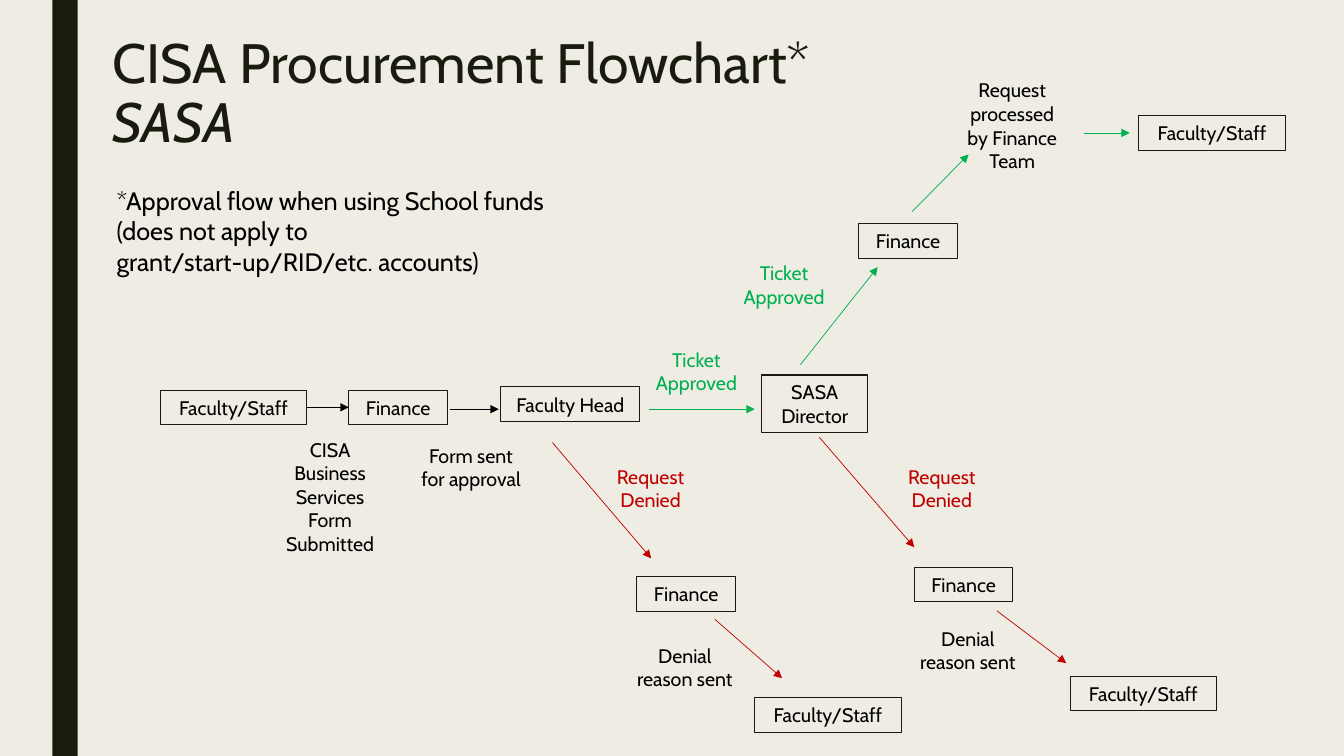
"""Build the procurement flowchart slide."""
from lxml import etree
from pptx import Presentation
from pptx import util as u
from pptx.dml import color
from pptx.enum import shapes, text
from pptx.oxml import ns

FONT = "Cabin"
HUES = {"page": "EFEDE3", "dark": "191B0E", "black": "000000",
        "green": "00B050", "red": "C00000"}
BOXES = [
    ("Faculty/Staff", 4.04, 9.83, 3.69, 0.87),
    ("Finance", 8.79, 9.83, 2.49, 0.87),
    ("Faculty Head", 12.62, 9.75, 3.51, 0.87),
    ("SASA Director", 19.2, 9.45, 2.67, 1.45),
    ("Finance", 21.64, 5.64, 2.49, 0.87),
    ("Faculty/Staff", 28.7, 2.92, 3.69, 0.87),
    ("Finance", 16.05, 14.53, 2.49, 0.87),
    ("Faculty/Staff", 19.02, 17.58, 3.69, 0.87),
    ("Finance", 23.04, 14.3, 2.49, 0.87),
    ("Faculty/Staff", 26.97, 17.04, 3.69, 0.87),
]
LABELS = [
    ("CISA Business Services Form Submitted", 6.76, 10.9, 3.12, 3.25, "black"),
    ("Form sent for approval", 10.31, 11.05, 3.12, 1.45, "black"),
    ("Ticket Approved", 15.85, 8.64, 3.4, 1.45, "green"),
    ("Ticket Approved", 18.06, 6.45, 3.4, 1.45, "green"),
    ("Request processed by Finance Team", 23.95, 1.85, 3.12, 2.64, "black"),
    ("Request Denied", 14.73, 11.58, 3.33, 1.45, "red"),
    ("Request Denied", 22.07, 11.58, 3.33, 1.45, "red"),
    ("Denial reason sent", 15.7, 16.1, 3.12, 1.45, "black"),
    ("Denial reason sent", 22.83, 15.67, 3.12, 1.45, "black"),
]
ARROWS = [
    (11.33, 10.31, 12.57, 10.31, "black"),
    (16.36, 10.31, 19.02, 10.31, "green"),
    (20.17, 9.19, 22.12, 6.73, "green"),
    (22.99, 5.33, 24.41, 3.89, "green"),
    (27.33, 3.35, 28.47, 3.35, "green"),
    (13.92, 11.15, 16.41, 14.07, "red"),
    (20.65, 11.02, 23.04, 13.79, "red"),
    (18.01, 15.6, 19.71, 17.09, "red"),
    (25.12, 15.39, 26.87, 16.71, "red"),
]


def hue(name):
    return color.RGBColor.from_string(HUES[name])


def place(*sizes):
    return [u.Cm(size) for size in sizes]


def write(para, words, size=14, tint="black", align=text.PP_ALIGN.CENTER, slant=False):
    para.alignment = align
    run = para.add_run()
    run.text = words
    run.font.name = FONT
    run.font.size = u.Pt(size)
    run.font.italic = slant
    run.font.color.rgb = hue(tint)


def add_title(slide):
    title = slide.shapes.title
    title.left, title.top, title.width, title.height = place(2.57, 0.79, 19.76, 4.62)
    frame = title.text_frame
    frame.word_wrap = True
    frame.auto_size = text.MSO_AUTO_SIZE.NONE
    frame.vertical_anchor = text.MSO_ANCHOR.TOP
    para = frame.paragraphs[0]
    para.line_spacing = 0.89
    style = {"size": 39.6, "tint": "dark", "align": text.PP_ALIGN.LEFT}
    write(para, "CISA Procurement Flowchart*", **style)
    para.add_line_break()
    write(para, "SASA", slant=True, **style)


def add_bar(slide):
    bar = slide.shapes.add_shape(shapes.MSO_SHAPE.RECTANGLE, *place(1.32, 0, 0.64, 19.05))
    bar.shadow.inherit = False
    bar.fill.solid()
    bar.fill.fore_color.rgb = hue("dark")
    bar.line.fill.background()


def add_box(slide, words, *spot):
    box = slide.shapes.add_shape(shapes.MSO_SHAPE.RECTANGLE, *place(*spot))
    box.shadow.inherit = False
    box.fill.background()
    box.line.color.rgb = hue("dark")
    box.line.width = u.Pt(0.75)
    box.text_frame.word_wrap = True
    write(box.text_frame.paragraphs[0], words)
    return box


def add_label(slide, words, *spot, **style):
    frame = slide.shapes.add_textbox(*place(*spot)).text_frame
    frame.word_wrap = True
    write(frame.paragraphs[0], words, **style)


def add_arrow(slide, *ends, tint="black"):
    arrow = slide.shapes.add_connector(shapes.MSO_CONNECTOR.STRAIGHT, *place(*ends))
    arrow.line.color.rgb = hue(tint)
    arrow.line.width = u.Pt(0.5)
    etree.SubElement(arrow.line._get_or_add_ln(), ns.qn("a:tailEnd"), type="triangle")
    etree.SubElement(arrow._element.spPr, ns.qn("a:effectLst"))
    return arrow


def main():
    deck = Presentation()
    deck.slide_width, deck.slide_height = place(33.87, 19.05)
    slide = deck.slides.add_slide(deck.slide_layouts[5])
    slide.background.fill.solid()
    slide.background.fill.fore_color.rgb = hue("page")
    add_bar(slide)
    add_title(slide)
    add_label(slide, "*Approval flow when using School funds (does not apply to "
              "grant/start-up/RID/etc. accounts)", 2.69, 4.55, 11.68, 2.57,
              size=18, align=text.PP_ALIGN.LEFT)
    boxes = [add_box(slide, *box) for box in BOXES]
    for *label, tint in LABELS:
        add_label(slide, *label, tint=tint)
    for *ends, tint in ARROWS:
        add_arrow(slide, *ends, tint=tint)
    first = add_arrow(slide, 7.73, 10.27, 8.79, 10.27)
    first.begin_connect(boxes[0], 3)
    first.end_connect(boxes[1], 1)
    deck.save("out.pptx")


if __name__ == "__main__":
    main()
